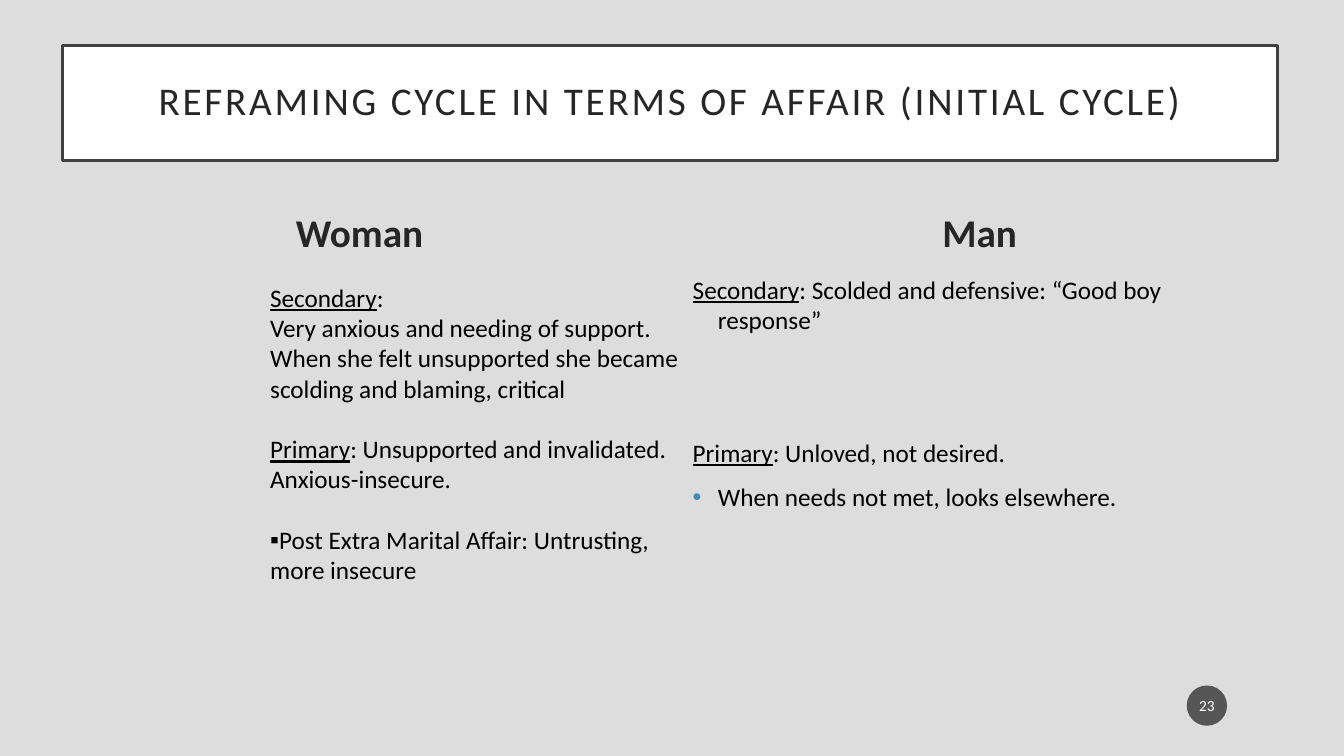
from lxml import etree
from pptx import Presentation
from pptx.dml.color import RGBColor
from pptx.enum.shapes import MSO_SHAPE
from pptx.enum.text import MSO_ANCHOR, MSO_AUTO_SIZE, PP_ALIGN
from pptx.oxml.ns import qn
from pptx.util import Inches, Pt

CENTER, LEFT = PP_ALIGN.CENTER, PP_ALIGN.LEFT
TOP, MIDDLE, BOTTOM = MSO_ANCHOR.TOP, MSO_ANCHOR.MIDDLE, MSO_ANCHOR.BOTTOM
NO_AUTOFIT = MSO_AUTO_SIZE.NONE
OVAL = MSO_SHAPE.OVAL

BACKGROUND = RGBColor(0xDD, 0xDD, 0xDD)
WHITE = RGBColor(0xFF, 0xFF, 0xFF)
BLACK = RGBColor(0x00, 0x00, 0x00)
HEADING = RGBColor(0x26, 0x26, 0x26)
BORDER = RGBColor(0x40, 0x40, 0x40)
BADGE = RGBColor(0x1D, 0x1D, 0x1D)
ACCENT = RGBColor(0x41, 0x8A, 0xB3)

WIDTH, HEIGHT = Inches(13.33), Inches(7.5)
MARGIN, COLUMN_WIDTH, SECOND_COLUMN = 4.65, 44.19, 50.79
COMPARISON_LAYOUT = 4
BODY_GAP = 10
BLANK_LINE = 21.6

TITLE_FONT = {"size": Pt(28), "name": "Calibri", "bold": False}
COLUMN_FONT = {**TITLE_FONT, "bold": True}
BODY_FONT = {"size": Pt(18), "name": "Calibri"}
BADGE_FONT = {"size": Pt(11), "name": "Calibri"}

WOMAN_TEXT = [
    ("Secondary", ":", 0, None),
    ("", "Very anxious and needing of support. When she felt unsupported "
     "she became scolding and blaming, critical", 0, None),
    ("Primary", ": Unsupported and invalidated. Anxious-insecure.", BLANK_LINE, None),
    ("", "Post Extra Marital Affair: Untrusting, more insecure", BLANK_LINE, ("▪", BLACK)),
]
MAN_TEXT = [
    ("Secondary", ": Scolded and defensive: “Good boy response”", BODY_GAP, None),
    ("Primary", ": Unloved, not desired.", 3 * BODY_GAP + 2 * BLANK_LINE, None),
    ("", "When needs not met, looks elsewhere.", BODY_GAP, ("•", ACCENT)),
]


def apply(target, values):
    for name, value in values.items():
        setattr(target, name, value)


def place(shape, left, top, width, height):
    apply(shape, {
        "left": round(WIDTH * left / 100),
        "top": round(HEIGHT * top / 100),
        "width": round(WIDTH * width / 100),
        "height": round(HEIGHT * height / 100),
    })


def prepare_frame(shape, anchor, side_inset=0.1, end_inset=0.05):
    frame = shape.text_frame
    apply(frame, {
        "auto_size": NO_AUTOFIT,
        "word_wrap": True,
        "vertical_anchor": anchor,
        "margin_left": Inches(side_inset),
        "margin_right": Inches(side_inset),
        "margin_top": Inches(end_inset),
        "margin_bottom": Inches(end_inset),
    })
    return frame


def add_run(paragraph, text, font, color, underline=False):
    run = paragraph.add_run()
    run.text = text
    apply(run.font, {**font, "underline": underline})
    run.font.color.rgb = color
    return run


def set_bullet(paragraph, bullet, hanging):
    properties = paragraph._p.get_or_add_pPr()
    properties.set("marL", str(Inches(hanging)))
    properties.set("indent", str(-Inches(hanging)))
    if bullet is None:
        etree.SubElement(properties, qn("a:buNone"))
        return
    character, color = bullet
    bullet_color = etree.SubElement(properties, qn("a:buClr"))
    etree.SubElement(bullet_color, qn("a:srgbClr"), val=str(color))
    etree.SubElement(properties, qn("a:buFont"), typeface="Arial")
    etree.SubElement(properties, qn("a:buChar"), char=character)


def write_line(shape, text, font, color, anchor, side_inset=0.1, end_inset=0.05):
    paragraph = prepare_frame(shape, anchor, side_inset, end_inset).paragraphs[0]
    paragraph.alignment = CENTER
    return paragraph, add_run(paragraph, text, font, color)


def write_title(title, text):
    place(title, MARGIN, 6, 90.4, 15.2)
    title.fill.solid()
    title.fill.fore_color.rgb = WHITE
    title.line.color.rgb = BORDER
    title.line.width = Pt(2.5)
    paragraph, run = write_line(title, text, TITLE_FONT, HEADING, MIDDLE, 0.2, 0.2)
    paragraph.line_spacing = 0.9
    run.font._element.set("spc", "200")


def write_heading(heading, text, left):
    place(heading, left, 25.07, COLUMN_WIDTH, 9.33)
    paragraph, _ = write_line(heading, text, COLUMN_FONT, HEADING, BOTTOM)
    paragraph.space_before = Pt(BODY_GAP)


def write_body(body, entries, box, hanging):
    place(body, *box)
    frame = prepare_frame(body, TOP)
    for index, (label, text, gap, bullet) in enumerate(entries):
        paragraph = frame.add_paragraph() if index else frame.paragraphs[0]
        apply(paragraph, {"alignment": LEFT, "space_before": Pt(gap), "space_after": Pt(0)})
        set_bullet(paragraph, bullet, hanging)
        if label:
            add_run(paragraph, label, BODY_FONT, BLACK, underline=True)
        add_run(paragraph, text, BODY_FONT, BLACK)


def add_badge(slide, number):
    badge = slide.shapes.add_shape(OVAL, 0, 0, 0, 0)
    place(badge, 88.3, 90.67, 3, 5.33)
    badge.shadow.inherit = False
    badge.fill.solid()
    badge.fill.fore_color.rgb = BADGE
    color = badge._element.spPr.find(".//" + qn("a:srgbClr"))
    etree.SubElement(color, qn("a:alpha"), val="70000")
    badge.line.fill.background()
    write_line(badge, number, BADGE_FONT, WHITE, MIDDLE, 0.02)


def main():
    presentation = Presentation()
    apply(presentation, {"slide_width": WIDTH, "slide_height": HEIGHT})
    slide = presentation.slides.add_slide(presentation.slide_layouts[COMPARISON_LAYOUT])
    slide.background.fill.solid()
    slide.background.fill.fore_color.rgb = BACKGROUND
    title, woman_heading, woman_body, man_heading, man_body = slide.placeholders
    write_title(title, "REFRAMING CYCLE IN TERMS OF AFFAIR (INITIAL CYCLE)")
    write_heading(woman_heading, "Woman", MARGIN)
    write_heading(man_heading, "Man", SECOND_COLUMN)
    write_body(woman_body, WOMAN_TEXT, (19.35, 36.67, 32.56, 53.87), 0)
    write_body(man_body, MAN_TEXT, (SECOND_COLUMN, 35.6, COLUMN_WIDTH, 53.73), 0.25)
    add_badge(slide, "23")
    presentation.save("out.pptx")


if __name__ == "__main__":
    main()
